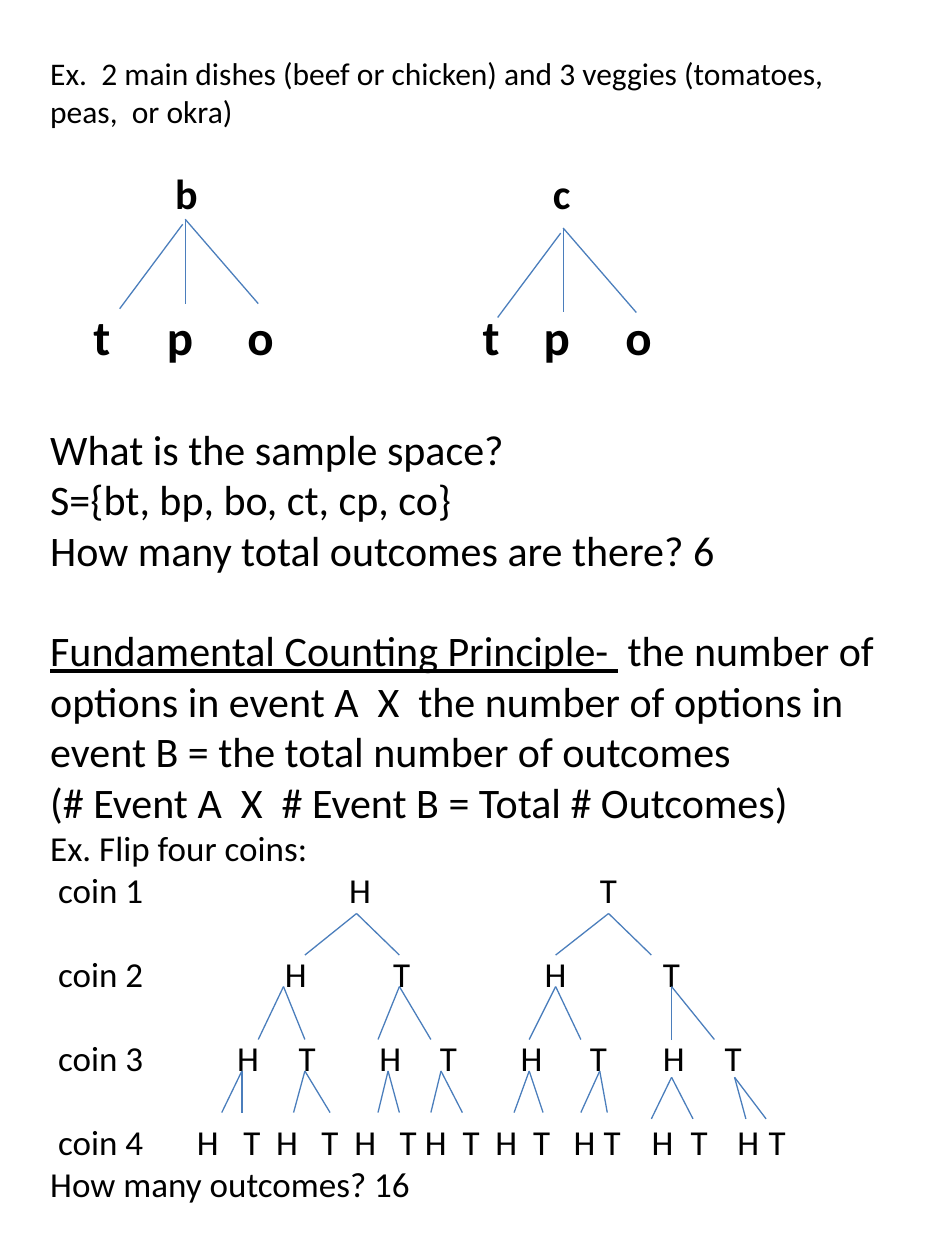
from lxml import etree
from pptx import Presentation
from pptx.dml.color import RGBColor
from pptx.enum.shapes import MSO_CONNECTOR
from pptx.oxml.ns import qn
from pptx.util import Inches, Pt

STRAIGHT = MSO_CONNECTOR.STRAIGHT
COLORS = {"text": "000000", "branch": "4B7EBC"}
FONT = "Calibri"
INSET = 0.1  # left inset of a text box, from which tree columns are measured


def add_text_box(slide, box):
    frame = slide.shapes.add_textbox(*(Inches(v) for v in box)).text_frame
    frame.word_wrap = True
    return frame


def add_line(frame, text, size, bold=False, before=0, columns=()):
    """Add a paragraph; columns are the centred tab stops in inches."""
    first = frame.paragraphs[0]
    paragraph = first if not first.runs else frame.add_paragraph()
    paragraph.text = text
    paragraph.space_before = Pt(before)
    for run in paragraph.runs:
        format_run(run, size, bold)
    if columns:
        stops = etree.SubElement(paragraph._p.get_or_add_pPr(), qn("a:tabLst"))
        for x in columns:
            etree.SubElement(stops, qn("a:tab"), pos=str(Inches(x)), algn="ctr")
    return paragraph


def format_run(run, size, bold=False):
    run.font.name = FONT
    run.font.size = Pt(size)
    run.font.bold = bold
    run.font.color.rgb = RGBColor.from_string(COLORS["text"])


def add_branch(shapes, start, end):
    branch = shapes.add_connector(STRAIGHT, *(Inches(v) for v in (*start, *end)))
    branch.line.color.rgb = RGBColor.from_string(COLORS["branch"])
    branch.line.width = Pt(0.75)
    etree.SubElement(branch._element.spPr, qn("a:effectLst"))


def add_dishes(slide, box):
    """Example with two main dishes and three veggies."""
    frame = add_text_box(slide, box)
    add_line(frame, "Ex.  2 main dishes (beef or chicken) and 3 veggies "
             "(tomatoes, peas,  or okra)", 18)
    add_line(frame, "\tb\tc", 24, True, 21.5, (1.08, 4.06))
    add_line(frame, "\tt\tp\to\tt\tp\to", 28, True, 50.8,
             (0.41, 1.03, 1.67, 3.5, 4.02, 4.67))

    # Three branches under each main dish
    left, top = box[:2]
    for dx, dy in ((1.17, 1.36), (4.17, 1.43)):
        x, y = left + dx, top + dy
        fan = slide.shapes.add_group_shape().shapes
        add_branch(fan, (x, y), (x, y + 0.67))
        add_branch(fan, (x - 0.02, y + 0.04), (x - 0.52, y + 0.71))
        add_branch(fan, (x, y), (x + 0.58, y + 0.67))


def add_principle(slide, box):
    """Sample space and the counting principle."""
    frame = add_text_box(slide, box)
    for text in ("What is the sample space?", "S={bt, bp, bo, ct, cp, co}",
                 "How many total outcomes are there? 6"):
        add_line(frame, text, 24)
    principle = add_line(frame, "Fundamental Counting Principle- ", 24, before=28.8)
    principle.runs[0].font.underline = True
    definition = principle.add_run()
    definition.text = (" the number of options in event A  X  the number of "
                       "options in event B = the total number of outcomes")
    format_run(definition, 24)
    add_line(frame, "(# Event A  X  # Event B = Total # Outcomes)", 24)


def add_coins(slide, box):
    """Tree of four coin flips."""
    frame = add_text_box(slide, box)
    add_line(frame, "Ex. Flip four coins:", 20)
    coin_columns = (
        (2.46, 4.43),
        (1.95, 2.79, 4.01, 4.93),
        (1.57, 2.04, 2.7, 3.16, 3.82, 4.35, 4.95, 5.42),
        (1.25, 1.6, 1.88, 2.22, 2.5, 2.84, 3.06, 3.34,
         3.62, 3.9, 4.24, 4.46, 4.86, 5.15, 5.54, 5.77),
    )
    for coin, columns in enumerate(coin_columns, 1):
        sides = "\tH\tT" * (len(columns) // 2)
        add_line(frame, f" coin {coin}{sides}", 20,
                 before=24 if coin > 1 else 0, columns=columns)
    add_line(frame, "How many outcomes? 16", 20)

    # Branches: top and height of each level, then apex with its two feet
    levels = (
        (0.74, 0.33, ((2.43, 2.02, 2.77), (4.43, 4.01, 4.77))),
        (1.32, 0.42, ((1.85, 1.65, 2.02), (2.77, 2.6, 3.02),
                      (4.01, 3.8, 4.21), (4.93, 4.93, 5.27))),
        (1.99, 0.33, ((1.52, 1.36, 1.52), (2.02, 1.93, 2.22),
                      (2.68, 2.6, 2.77), (3.1, 3.02, 3.27),
                      (3.8, 3.68, 3.91), (4.36, 4.21, 4.42))),
        (2.04, 0.33, ((4.93, 4.77, 5.1), (5.43, 5.52, 5.68))),
    )
    left, top = box[0] + INSET, box[1]
    for y, height, forks in levels:
        for apex, *feet in forks:
            for foot in feet:
                add_branch(slide.shapes, (left + apex, top + y),
                           (left + foot, top + y + height))


def main():
    prs = Presentation()
    prs.slide_width, prs.slide_height = Inches(7.5), Inches(10)
    slide = prs.slides.add_slide(prs.slide_layouts[6])
    add_dishes(slide, (0.3, 0.38, 6.75, 2.6))
    add_principle(slide, (0.3, 3.31, 6.75, 3.2))
    add_coins(slide, (0.3, 6.51, 6.75, 3.14))
    prs.save("out.pptx")


if __name__ == "__main__":
    main()
